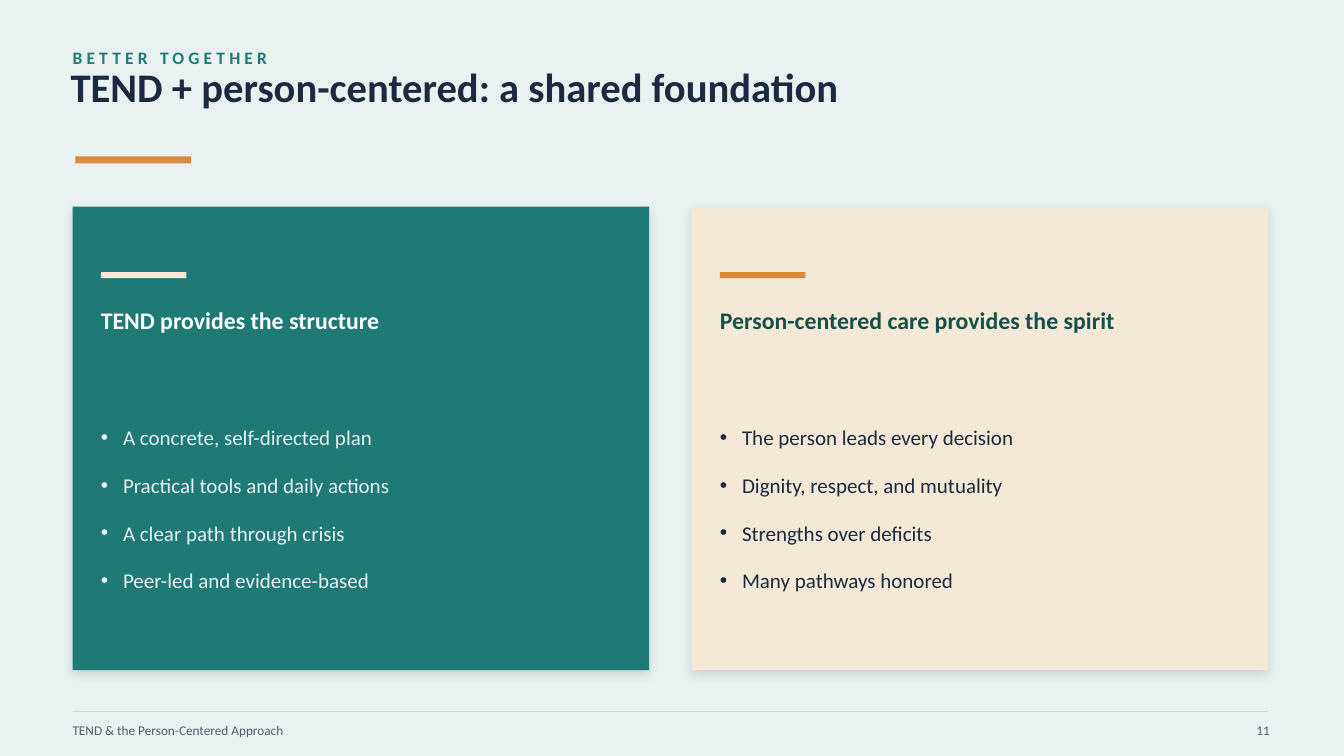
from dataclasses import dataclass
from lxml import etree
from pptx import Presentation
from pptx.dml.color import RGBColor
from pptx.enum.shapes import MSO_CONNECTOR, MSO_SHAPE
from pptx.enum.text import MSO_ANCHOR, MSO_AUTO_SIZE, PP_ALIGN
from pptx.oxml import parse_xml
from pptx.oxml.ns import nsdecls, qn
from pptx.util import Cm, Pt

RECT = MSO_SHAPE.RECTANGLE
LINE = MSO_CONNECTOR.STRAIGHT
TOP, MIDDLE = MSO_ANCHOR.TOP, MSO_ANCHOR.MIDDLE
LEFT, RIGHT = PP_ALIGN.LEFT, PP_ALIGN.RIGHT
FIXED = MSO_AUTO_SIZE.NONE


@dataclass(frozen=True)
class Theme:
    font: str = "Calibri"
    page: str = "EAF2F1"
    teal: str = "1F7A75"
    deep: str = "12514D"
    navy: str = "1B2A41"
    amber: str = "D98B3A"
    cream: str = "F4E9D6"
    sand: str = "E7D3B3"
    slate: str = "51606E"
    mist: str = "E6F1F0"
    white: str = "FFFFFF"
    title: float = 29
    head: float = 17
    body: float = 15
    label: float = 12.5
    small: float = 9.5


theme = Theme()


def write(shape, box, lines, size, color, bold=False, align=LEFT, anchor=MIDDLE, list_gap=None):
    shape.left, shape.top, shape.width, shape.height = [Cm(v) for v in box]
    frame = shape.text_frame
    frame.word_wrap = True
    frame.auto_size = FIXED
    frame.vertical_anchor = anchor
    frame.margin_left = frame.margin_right = frame.margin_top = frame.margin_bottom = 0
    frame.text = "\n".join(lines)
    for para in frame.paragraphs:
        para.alignment = align
        para.space_before = Pt(0)
        if list_gap:
            para.space_after = Pt(list_gap)
            props = para._p.get_or_add_pPr()
            props.set("marL", str(Cm(0.56)))
            props.set("indent", str(-Cm(0.56)))
            etree.SubElement(props, qn("a:buChar"), char="•")
        para.font.name = theme.font
        para.font.size = Pt(size)
        para.font.bold = bold
        para.font.color.rgb = RGBColor.from_string(color)


def block(box, color):
    shape = slide.shapes.add_shape(RECT, *[Cm(v) for v in box])
    shape.shadow.inherit = False
    shape.fill.solid()
    shape.fill.fore_color.rgb = RGBColor.from_string(color)
    shape.line.fill.background()
    return shape


deck = Presentation()
deck.slide_width, deck.slide_height = Cm(33.87), Cm(19.05)
slide = deck.slides.add_slide(deck.slide_layouts[3])
slide.background.fill.solid()
slide.background.fill.fore_color.rgb = RGBColor.from_string(theme.page)
title, *bodies = slide.placeholders

edge, card_wide, step = 1.83, 14.53, 15.6
end = edge + step + card_wide

label = slide.shapes.add_textbox(0, 0, 0, 0)
write(label, (edge, 1.07, 30.23, 0.76), ["BETTER TOGETHER"], theme.label, theme.teal, bold=True)
label.text_frame.paragraphs[0].runs[0]._r.get_or_add_rPr().set("spc", "300")
write(title, (1.78, 1.57, 30.23, 2.41), ["TEND + person-centered: a shared foundation"],
      theme.title, theme.navy, bold=True, anchor=TOP)
block((1.9, 3.94, 2.92, 0.18), theme.amber)

rule = slide.shapes.add_connector(LINE, Cm(edge), Cm(17.93), Cm(end), Cm(17.93))
rule.line.color.rgb = RGBColor.from_string(theme.sand)
rule.line.width = Pt(1)
etree.SubElement(rule._element.spPr, qn("a:effectLst"))

for left, wide, text, align in [
    (edge, 20.32, "TEND & the Person-Centered Approach", LEFT),
    (29.46, 2.54, "11", RIGHT),
]:
    note = slide.shapes.add_textbox(0, 0, 0, 0)
    write(note, (left, 18.03, wide, 0.76), [text], theme.small, theme.slate, align=align)

cards = [
    ("TEND provides the structure",
     ["A concrete, self-directed plan", "Practical tools and daily actions",
      "A clear path through crisis", "Peer-led and evidence-based"],
     theme.teal, theme.cream, theme.white, theme.mist),
    ("Person-centered care provides the spirit",
     ["The person leads every decision", "Dignity, respect, and mutuality",
      "Strengths over deficits", "Many pathways honored"],
     theme.cream, theme.amber, theme.deep, theme.navy),
]
for i, (name, points, fill, accent, ink, text_ink) in enumerate(cards):
    left = edge + i * step
    inner = left + 0.71
    card = block((left, 5.21, card_wide, 11.68), fill)
    shade = parse_xml(
        f'<a:outerShdw {nsdecls("a")} blurRad="{Pt(7)}" dist="{Pt(3)}" dir="5400000" '
        f'algn="ctr" rotWithShape="0"><a:srgbClr val="{theme.navy}">'
        '<a:alpha val="14000"/></a:srgbClr></a:outerShdw>')
    card._element.spPr.find(qn("a:effectLst")).append(shade)
    block((inner, 6.86, 2.16, 0.15), accent)
    head = slide.shapes.add_textbox(0, 0, 0, 0)
    write(head, (inner, 7.42, 13.21, 1.27), [name], theme.head, ink, bold=True)
    body = bodies[i]
    write(body, (inner, 9.14, 13.21, 7.37), points, theme.body, text_ink, list_gap=16)
    slide.shapes._spTree.append(body._element)

deck.save("out.pptx")
